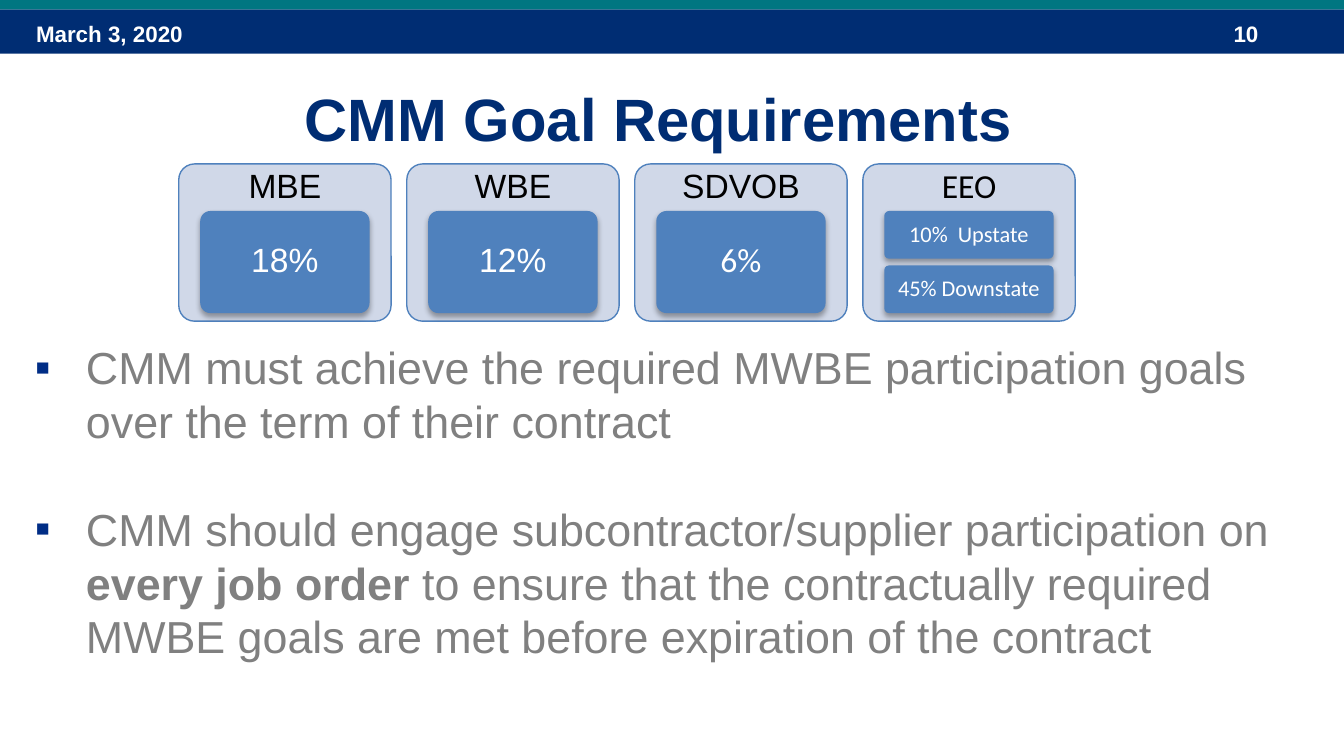
from pptx import Presentation
from pptx.dml.color import RGBColor
from pptx.enum.shapes import MSO_SHAPE as SHAPE
from pptx.enum.text import MSO_ANCHOR as ANCHOR, MSO_AUTO_SIZE as FIT, PP_ALIGN as ALIGN
from pptx.oxml import parse_xml
from pptx.oxml.ns import nsdecls
from pptx.util import Inches, Pt

NAVY, TEAL, BLUE, PALE, GRAY = "002D73", "007681", "4F81BD", "D0D8E8", "808080"


def add_box(kind, x, y, w, h, fill, line=None):
    s = slide.shapes.add_shape(kind, Inches(x), Inches(y), Inches(w), Inches(h))
    s.shadow.inherit = False
    s.fill.solid()
    s.fill.fore_color.rgb = RGBColor.from_string(fill)
    if line:
        s.line.color.rgb = RGBColor.from_string(line)
        s.line.width = Pt(0.75)
    else:
        s.line.fill.background()
    return s


def write(s, text, size, color, font="Arial", bold=False, align=ALIGN.LEFT,
          anchor=ANCHOR.TOP, inset=None):
    tf = s.text_frame
    tf.word_wrap = True
    tf.auto_size = FIT.NONE
    tf.vertical_anchor = anchor
    if inset is not None:
        tf.margin_left = tf.margin_right = tf.margin_top = tf.margin_bottom = Inches(inset)
    tf.text = text
    p = tf.paragraphs[0]
    p.alignment = align
    f = p.runs[0].font
    f.size, f.bold, f.name = Pt(size), bold, font
    f.color.rgb = RGBColor.from_string(color)
    return p


prs = Presentation()
prs.slide_width = Inches(10)
prs.slide_height = Inches(10 * 9 / 16)
slide = prs.slides.add_slide(prs.slide_layouts[1])

# Header bands, date and page number
add_box(SHAPE.RECTANGLE, 0, 0.07, 10, 0.33, NAVY)
add_box(SHAPE.RECTANGLE, 0, -0.02, 10, 0.09, TEAL)
for text, x, w in [("March 3, 2020", 0.17, 2.33), ("10", 9.08, 0.75)]:
    s = slide.shapes.add_textbox(Inches(x), Inches(0.1), Inches(w), Inches(0.3))
    write(s, text, 12, "FFFFFF", bold=True)

# Title
title = slide.shapes.title
title.left, title.top, title.width, title.height = map(Inches, (0.15, 0.56, 9.5, 0.64))
write(title, "CMM Goal Requirements", 32, NAVY, bold=True, align=ALIGN.CENTER)

# Bulleted list
bullets = [
    [("CMM must achieve the required MWBE participation goals over the term of their contract", False)],
    [("CMM should engage subcontractor/supplier participation on ", False),
     ("every job order ", True),
     ("to ensure that the contractually required MWBE goals are met before expiration of the contract", False)],
]
body = slide.placeholders[1]
body.left, body.top, body.width, body.height = map(Inches, (0.16, 2.48, 9.58, 2.52))
tf = body.text_frame
tf.word_wrap = True
tf.auto_size = FIT.NONE
for i, parts in enumerate(bullets):
    p = tf.paragraphs[0] if i == 0 else tf.add_paragraph()
    p.line_spacing = 1.0
    p.space_before = Pt(29 if i else 0)
    pPr = p._p.get_or_add_pPr()
    pPr.set("marL", str(Inches(0.38)))
    pPr.set("indent", str(-Inches(0.38)))
    for tag in ('<a:buClr {}><a:srgbClr val="002D86"/></a:buClr>',
                '<a:buFont {} typeface="Arial"/>',
                '<a:buChar {} char="▪"/>'):
        pPr.append(parse_xml(tag.format(nsdecls("a"))))
    for text, bold in parts:
        r = p.add_run()
        r.text = text
        r.font.size, r.font.bold, r.font.name = Pt(24), bold, "Arial"
        r.font.color.rgb = RGBColor.from_string(GRAY)

# Goal cards: heading, heading font, values, value font, value size
cards = [
    ("MBE", "Arial", ["18%"], "Arial", 18),
    ("WBE", "Arial", ["12%"], "Arial", 18),
    ("SDVOB", "Arial", ["6%"], "Calibri", 18),
    ("EEO", "Calibri", ["10%  Upstate", "45% Downstate"], "Calibri", 12),
]
FIRST, LAST, GAP = 1.33, 6.42, 0.05
pitch = (LAST - FIRST) / (len(cards) - 1)
for i, (heading, head_font, values, font, size) in enumerate(cards):
    x = FIRST + i * pitch
    card = add_box(SHAPE.ROUNDED_RECTANGLE, x, 1.22, 1.58, 1.17, PALE, BLUE)
    card.adjustments[0] = 0.1
    s = slide.shapes.add_textbox(Inches(x), Inches(1.22), Inches(1.58), Inches(0.35))
    p = write(s, heading, 18, "000000", head_font, align=ALIGN.CENTER,
              anchor=ANCHOR.MIDDLE, inset=0.07)
    p.line_spacing = 0.9

    # Value tiles share the height below the heading
    h = (0.76 - GAP * (len(values) - 1)) / len(values)
    for j, value in enumerate(values):
        tile = add_box(SHAPE.ROUNDED_RECTANGLE, x + 0.16, 1.57 + j * (h + GAP), 1.26, h, BLUE)
        tile.adjustments[0] = 0.1
        p = write(tile, value, size, "FFFFFF", font, align=ALIGN.CENTER,
                  anchor=ANCHOR.MIDDLE, inset=0.04)
        p.line_spacing = 0.9
        effects = tile._element.spPr.find("{*}effectLst")
        effects.append(parse_xml(
            f'<a:outerShdw {nsdecls("a")} blurRad="{Pt(3.1)}" dist="{Pt(1.8)}" dir="5400000" '
            'rotWithShape="0"><a:srgbClr val="000000"><a:alpha val="35000"/></a:srgbClr>'
            '</a:outerShdw>'))

prs.save("out.pptx")
